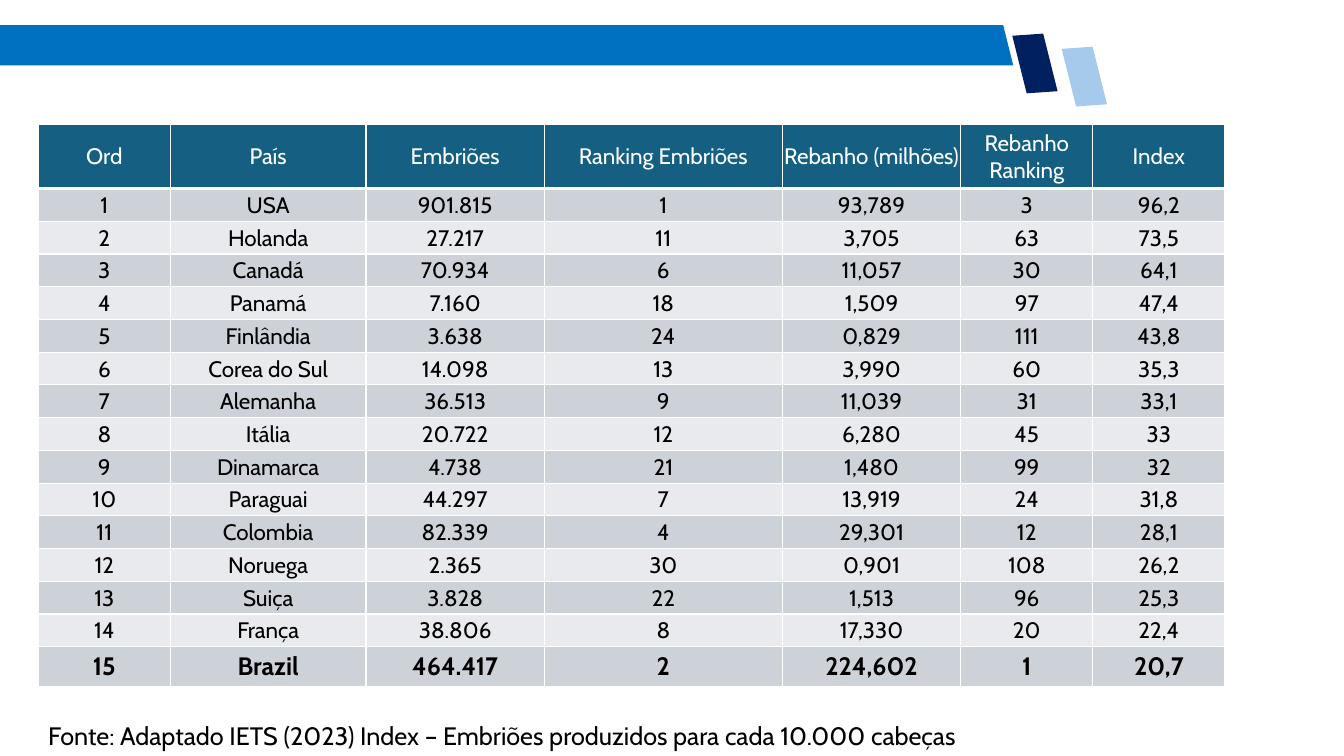
from lxml import etree
from pptx import Presentation, util as u
from pptx.dml.color import RGBColor
from pptx.enum import shapes, text
from pptx.oxml.ns import qn

INK = {"head": "156082", "odd": "CCD2D8", "even": "E8EAED", "white": "FFFFFF",
       "black": "000000", "blue": "0070C0", "navy": "002060", "sky": "A6CAEC"}
FACE = "Cabin"
COLS = [1.31, 1.94, 1.77, 2.36, 1.77, 1.31, 1.31]
TOP, MID, END = 0.64, 0.325, 0.39
HEAD = ["Ord", "País", "Embriões", "Ranking Embriões", "Rebanho (milhões)",
        "Rebanho Ranking", "Index"]
HERDS = [
    ["USA", "901.815", "1", "93,789", "3", "96,2"],
    ["Holanda", "27.217", "11", "3,705", "63", "73,5"],
    ["Canadá", "70.934", "6", "11,057", "30", "64,1"],
    ["Panamá", "7.160", "18", "1,509", "97", "47,4"],
    ["Finlândia", "3.638", "24", "0,829", "111", "43,8"],
    ["Corea do Sul", "14.098", "13", "3,990", "60", "35,3"],
    ["Alemanha", "36.513", "9", "11,039", "31", "33,1"],
    ["Itália", "20.722", "12", "6,280", "45", "33"],
    ["Dinamarca", "4.738", "21", "1,480", "99", "32"],
    ["Paraguai", "44.297", "7", "13,919", "24", "31,8"],
    ["Colombia", "82.339", "4", "29,301", "12", "28,1"],
    ["Noruega", "2.365", "30", "0,901", "108", "26,2"],
    ["Suiça", "3.828", "22", "1,513", "96", "25,3"],
    ["França", "38.806", "8", "17,330", "20", "22,4"],
    ["Brazil", "464.417", "2", "224,602", "1", "20,7"],
]
NOTE = "Fonte: Adaptado IETS (2023) Index – Embriões produzidos para cada 10.000 cabeças"


def put(item, **looks):
    for name, value in looks.items():
        setattr(item, name, value)


def tint(ink):
    return RGBColor.from_string(INK[ink])


def paint(item, ink):
    item.fill.solid()
    item.fill.fore_color.rgb = tint(ink)


def style(para, size, ink, bold=False):
    put(para.font, name=FACE, size=u.Pt(size), bold=bold)
    para.font.color.rgb = tint(ink)


def edge(cell, low):
    props = cell._tc.get_or_add_tcPr()
    for side, width in zip("LRTB", (1, 1, 1, low)):
        line = etree.SubElement(props, qn("a:ln" + side), w=str(u.Pt(width)))
        fill = etree.SubElement(line, qn("a:solidFill"))
        etree.SubElement(fill, qn("a:srgbClr"), val=INK["white"])


def slant(slide, box, ink, turn=0):
    shape = slide.shapes.add_shape(shapes.MSO_SHAPE.PARALLELOGRAM,
                                   *map(u.Inches, box))
    shape._element.spPr.find(qn("a:xfrm")).set("flipH", "1")
    shape.shadow.inherit = False
    shape.rotation = turn
    shape.line.fill.background()
    paint(shape, ink)


def banner(slide, left, top, width):
    slant(slide, (left, top, width, 0.4), "blue")
    for step, ink in enumerate(["navy", "sky"]):
        slant(slide, (left + width + 0.01 + step * 0.49, top + 0.09 + step * 0.13,
                      0.41, 0.58), ink, 356)


def ranks(slide, left, top):
    rows = [HEAD] + [[str(n), *herd] for n, herd in enumerate(HERDS, 1)]
    highs = [TOP] + [MID] * (len(rows) - 2) + [END]
    box = map(u.Inches, (left, top, sum(COLS), sum(highs)))
    grid = slide.shapes.add_table(len(rows), len(COLS), *box).table
    for col, wide in zip(grid.columns, COLS):
        col.width = u.Inches(wide)
    for r, (row, high) in enumerate(zip(rows, highs)):
        grid.rows[r].height = u.Inches(high)
        last = r == len(rows) - 1
        for c, word in enumerate(row):
            cell = grid.cell(r, c)
            thin = u.Inches(0.01)
            put(cell, text=word, vertical_anchor=text.MSO_ANCHOR.MIDDLE,
                margin_left=thin, margin_right=thin, margin_top=thin,
                margin_bottom=0)
            edge(cell, 1 if r else 3)
            paint(cell, ("odd" if r % 2 else "even") if r else "head")
            para = cell.text_frame.paragraphs[0]
            para.alignment = text.PP_ALIGN.CENTER
            style(para, 18 if last else 16, "black" if r else "white", last)


def source(slide, *box):
    frame = slide.shapes.add_textbox(*map(u.Inches, box)).text_frame
    put(frame, word_wrap=True, text=NOTE,
        auto_size=text.MSO_AUTO_SIZE.SHAPE_TO_FIT_TEXT)
    style(frame.paragraphs[0], 18, "black")


def main():
    deck = Presentation()
    put(deck, slide_width=u.Inches(13.33), slide_height=u.Inches(7.5))
    slide = deck.slides.add_slide(deck.slide_layouts[6])
    ranks(slide, 0.38, 1.23)
    source(slide, 0.38, 7.1, 10.1, 0.4)
    banner(slide, -0.24, 0.25, 10.29)
    deck.save("out.pptx")


if __name__ == "__main__":
    main()
